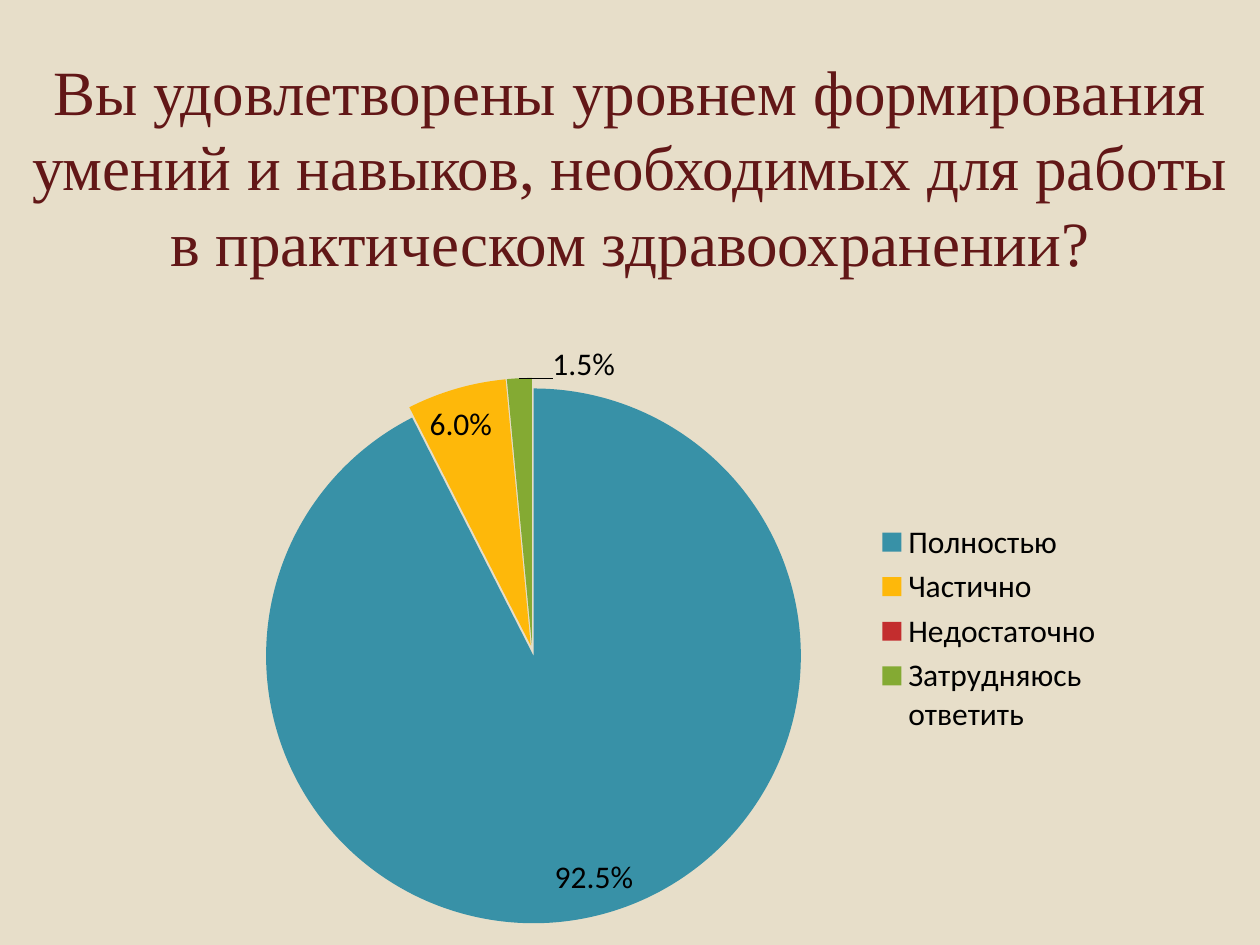
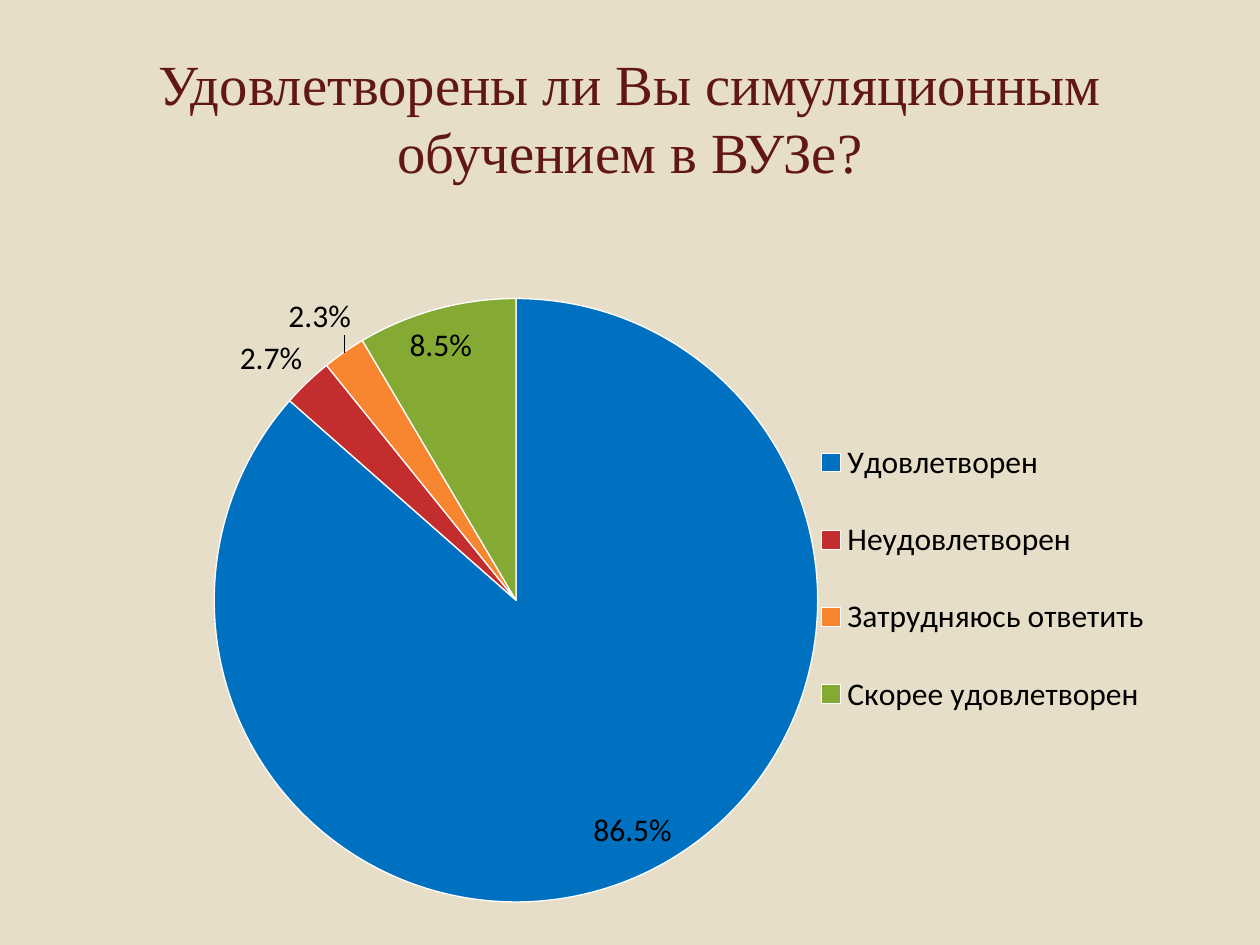
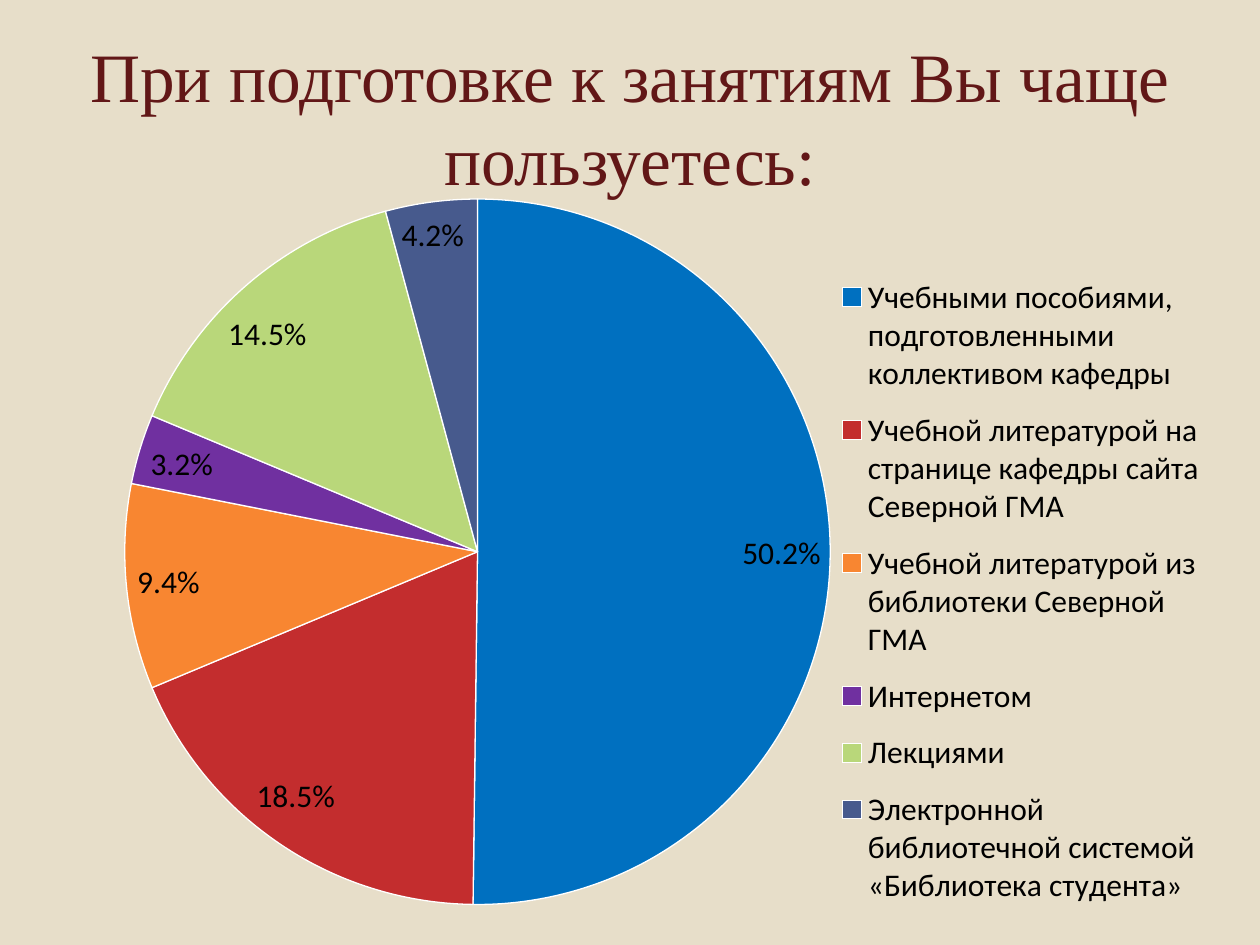
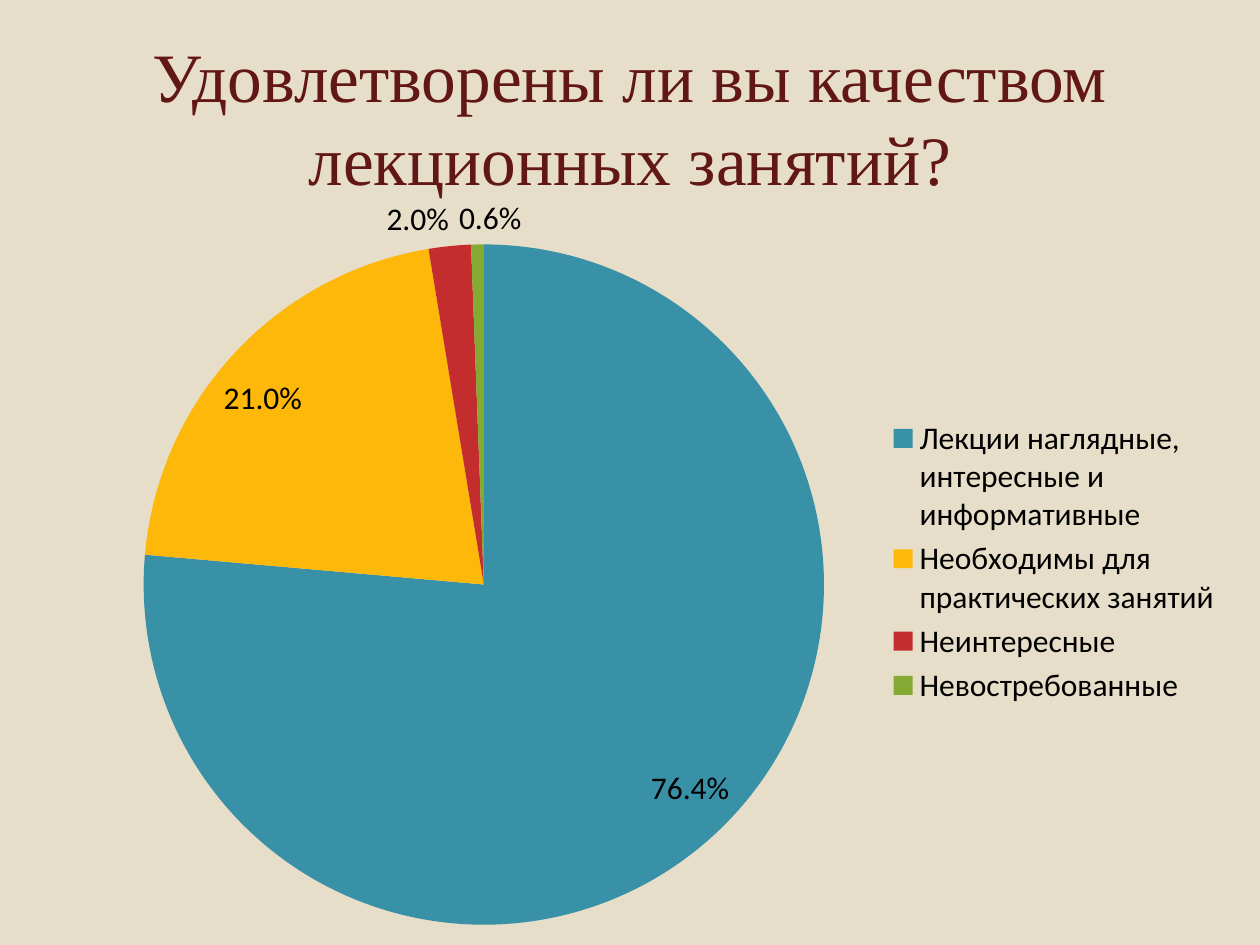
from lxml.etree import SubElement
from pptx import Presentation
from pptx.chart.data import CategoryChartData
from pptx.dml.color import RGBColor
from pptx.enum.chart import XL_CHART_TYPE, XL_LABEL_POSITION, XL_LEGEND_POSITION
from pptx.enum.text import MSO_ANCHOR, MSO_AUTO_SIZE, PP_ALIGN
from pptx.oxml import parse_xml
from pptx.oxml.ns import nsdecls, qn
from pptx.util import Inches, Pt

# Shared look
SAND = RGBColor(0xE7, 0xDE, 0xC9)
MAROON = RGBColor(0x62, 0x17, 0x17)
BLACK = RGBColor(0x00, 0x00, 0x00)
WHITE = RGBColor(0xFF, 0xFF, 0xFF)
TEAL = RGBColor(0x38, 0x91, 0xA7)
AMBER = RGBColor(0xFE, 0xB8, 0x0A)
RED = RGBColor(0xC3, 0x2D, 0x2E)
GREEN = RGBColor(0x84, 0xAA, 0x33)
BLUE = RGBColor(0x00, 0x70, 0xC0)
ORANGE = RGBColor(0xF8, 0x86, 0x31)
PURPLE = RGBColor(0x70, 0x30, 0xA0)
LIME = RGBColor(0xB9, 0xD7, 0x7A)
NAVY = RGBColor(0x47, 0x5A, 0x8D)

TITLE_FONT = "Times New Roman"
CHART_FONT = "Calibri"
PERCENT_FORMAT = "0.0%"
TITLE_ONLY = 5
TITLE_BOX = (0.5, 0.3, 9, 1.25)

# Boxes are left, top, width, height in inches on the slide
QUESTIONS = [
    dict(
        title="Вы удовлетворены уровнем формирования умений и навыков, "
              "необходимых для работы в практическом здравоохранении?",
        title_box=(0, 0.3, 10, 2.03), title_size=36,
        chart_box=(1.54, 2.51, 7.32, 4.96),
        pie_box=(2.06, 3, 4.33, 4.33),
        legend_box=(6.9, 4.1, 1.9, 1.77),
        answers=[("Полностью", 92.5, TEAL), ("Частично", 6, AMBER),
                 ("Недостаточно", 0, RED), ("Затрудняюсь ответить", 1.5, GREEN)],
        explosion=2, shifted_label=(3, 0.07, 0.02),
    ),
    dict(
        title="Удовлетворены ли Вы симуляционным обучением в ВУЗе?",
        title_size=32.4,
        chart_box=(1.38, 1.7, 8.11, 5.8),
        pie_box=(1.7, 2.37, 4.79, 4.79),
        legend_box=(6.4, 3.21, 2.8, 2.76),
        answers=[("Удовлетворен", 86.5, BLUE), ("Неудовлетворен", 2.7, RED),
                 ("Затрудняюсь ответить", 2.3, ORANGE),
                 ("Скорее удовлетворен", 8.5, GREEN)],
        outline=WHITE,
    ),
    dict(
        title="При подготовке к занятиям Вы чаще пользуетесь:",
        title_size=39.6,
        chart_box=(0.35, 1.07, 9.45, 6.27),
        pie_box=(0.99, 1.58, 5.6, 5.6),
        legend_box=(6.61, 2.06, 2.98, 5.27),
        answers=[
            ("Учебными пособиями, подготовленными коллективом кафедры", 50.2, BLUE),
            ("Учебной литературой на странице кафедры сайта Северной ГМА", 18.5, RED),
            ("Учебной литературой из библиотеки Северной ГМА", 9.4, ORANGE),
            ("Интернетом", 3.2, PURPLE),
            ("Лекциями", 14.5, LIME),
            ("Электронной библиотечной системой «Библиотека студента»", 4.2, NAVY),
        ],
        outline=WHITE,
    ),
    dict(
        title="Удовлетворены ли вы качеством лекционных занятий?",
        title_size=39.6,
        chart_box=(0.67, 1.44, 9.13, 6.03),
        pie_box=(1.14, 1.94, 5.4, 5.4),
        legend_box=(6.99, 3.28, 2.75, 2.36),
        answers=[("Лекции наглядные, интересные и информативные", 76.4, TEAL),
                 ("Необходимы для практических занятий", 21, AMBER),
                 ("Неинтересные", 2, RED), ("Невостребованные", 0.6, GREEN)],
    ),
]


def add_title(slide, text, box, size):
    title = slide.shapes.title
    title.left, title.top, title.width, title.height = map(Inches, box)
    frame = title.text_frame
    frame.text = text
    frame.word_wrap = True
    frame.auto_size = MSO_AUTO_SIZE.NONE
    frame.vertical_anchor = MSO_ANCHOR.MIDDLE
    paragraph = frame.paragraphs[0]
    paragraph.alignment = PP_ALIGN.CENTER
    font = paragraph.runs[0].font
    font.name, font.size, font.color.rgb = TITLE_FONT, Pt(size), MAROON


def place_part(part, part_box, chart_box, inner=False):
    """Fix a plot area or legend at a slide box, as fractions of its chart."""
    left, top, width, height = chart_box
    fractions = ((part_box[0] - left) / width, (part_box[1] - top) / height,
                 part_box[2] / width, part_box[3] / height)
    for old in part.findall(qn("c:layout")):
        part.remove(old)
    layout = parse_xml(f"<c:layout {nsdecls('c')}/>")
    manual = SubElement(layout, qn("c:manualLayout"))
    if inner:
        SubElement(manual, qn("c:layoutTarget")).set("val", "inner")
    for side in "xy":
        SubElement(manual, qn(f"c:{side}Mode")).set("val", "edge")
    for side, fraction in zip("xywh", fractions):
        SubElement(manual, qn(f"c:{side}")).set("val", f"{fraction:.4f}")
    part.insert(0 if inner else 1, layout)


def shift_label(series, index, dx, dy):
    """Move one slice's percentage away from its usual place."""
    series.points[index].data_label.position = XL_LABEL_POSITION.BEST_FIT
    label = series.data_labels._element.find(qn("c:dLbl"))
    label.find(qn("c:showVal")).set("val", "0")
    label.find(qn("c:showPercent")).set("val", "1")
    label.insert(1, parse_xml(
        f"<c:layout {nsdecls('c')}><c:manualLayout>"
        f'<c:x val="{dx}"/><c:y val="{dy}"/></c:manualLayout></c:layout>'))
    label.insert(2, parse_xml(
        f'<c:numFmt {nsdecls("c")} formatCode="{PERCENT_FORMAT}" sourceLinked="0"/>'))


def add_pie(slide, answers, chart_box, pie_box, legend_box,
            outline=None, explosion=None, shifted_label=None):
    data = CategoryChartData()
    data.categories = [answer for answer, _, _ in answers]
    data.add_series("Series 1", [share for _, share, _ in answers])
    chart = slide.shapes.add_chart(
        XL_CHART_TYPE.PIE, *map(Inches, chart_box), data).chart
    chart.has_title = False
    chart.font.name, chart.font.size = CHART_FONT, Pt(18)
    chart.font.color.rgb = BLACK

    # Slices
    plot = chart.plots[0]
    plot.vary_by_categories = True
    series = plot.series[0]
    if explosion:
        series._element.find(qn("c:tx")).addnext(
            parse_xml(f'<c:explosion {nsdecls("c")} val="{explosion}"/>'))
    for index, (_, _, color) in enumerate(answers):
        slice_format = series.points[index].format
        slice_format.fill.solid()
        slice_format.fill.fore_color.rgb = color
        if outline is None:
            slice_format.line.fill.background()
        else:
            slice_format.line.color.rgb = outline
            slice_format.line.width = Pt(0.75)

    # Percentages
    labels = series.data_labels
    labels.show_percentage = True
    labels.show_value = False
    labels.number_format = PERCENT_FORMAT
    labels.number_format_is_linked = False
    labels.position = XL_LABEL_POSITION.BEST_FIT
    if shifted_label:
        shift_label(series, *shifted_label)

    # Legend and plot places
    chart.has_legend = True
    chart.legend.position = XL_LEGEND_POSITION.RIGHT
    chart.legend.include_in_layout = False
    place_part(chart.legend._element, legend_box, chart_box)
    plot_area = chart._chartSpace.chart.plotArea
    place_part(plot_area, pie_box, chart_box, inner=True)


def add_question_slide(deck, title, title_size, title_box=TITLE_BOX, **pie):
    slide = deck.slides.add_slide(deck.slide_layouts[TITLE_ONLY])
    add_title(slide, title, title_box, title_size)
    add_pie(slide, **pie)


def main():
    deck = Presentation()
    deck.slide_width, deck.slide_height = Inches(10), Inches(7.5)
    background = deck.slide_master.background.fill
    background.solid()
    background.fore_color.rgb = SAND
    for question in QUESTIONS:
        add_question_slide(deck, **question)
    deck.save("out.pptx")


if __name__ == "__main__":
    main()
